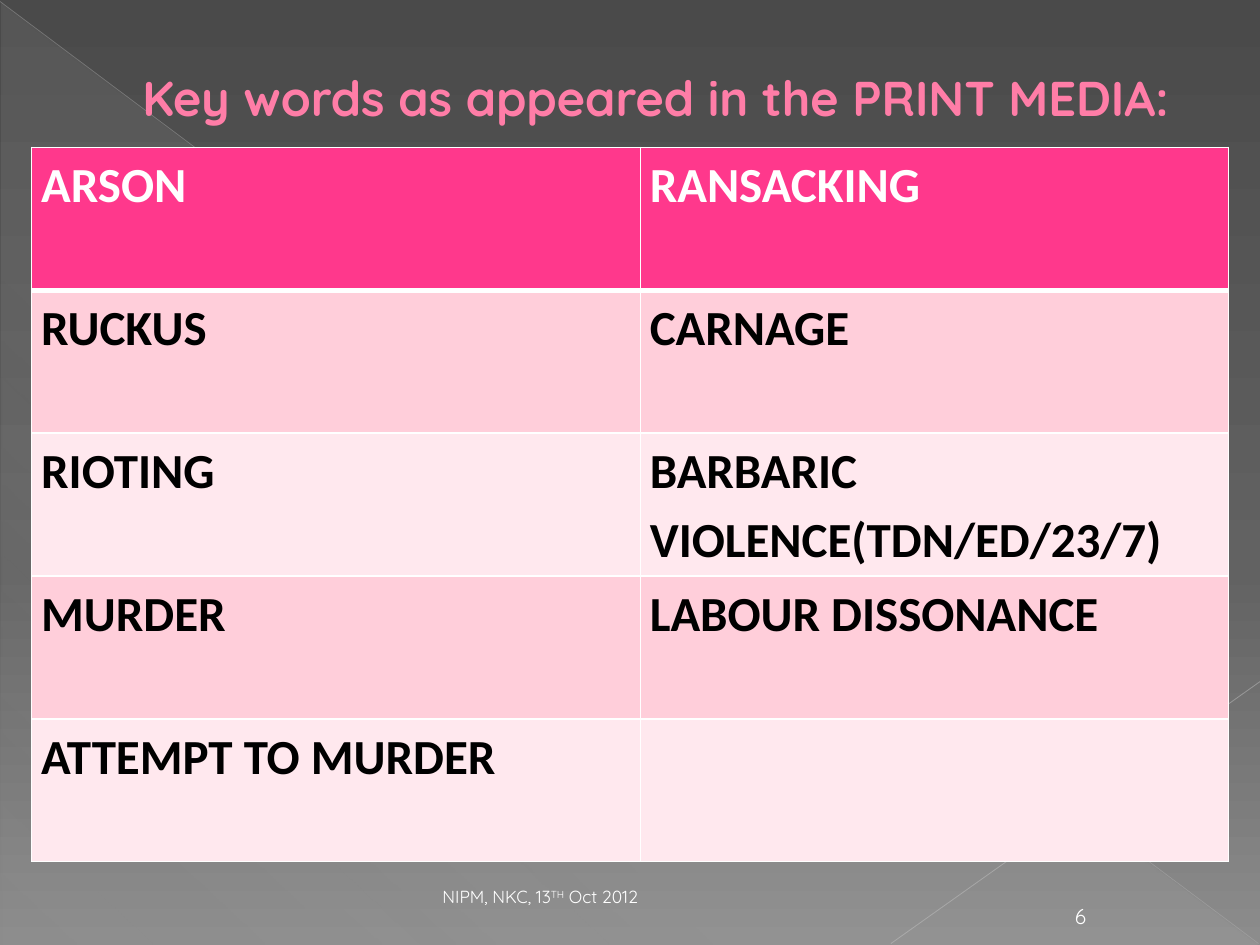
from dataclasses import dataclass

from lxml import etree
from pptx import Presentation
from pptx.dml.color import RGBColor
from pptx.enum.shapes import MSO_CONNECTOR, MSO_SHAPE
from pptx.enum.text import MSO_ANCHOR, MSO_AUTO_SIZE, PP_ALIGN
from pptx.oxml.ns import qn
from pptx.util import Cm, Pt

STRAIGHT = MSO_CONNECTOR.STRAIGHT
RIGHT_TRIANGLE = MSO_SHAPE.RIGHT_TRIANGLE
LEFT, CENTER, RIGHT = PP_ALIGN.LEFT, PP_ALIGN.CENTER, PP_ALIGN.RIGHT
MIDDLE, BOTTOM = MSO_ANCHOR.MIDDLE, MSO_ANCHOR.BOTTOM
TITLE_ONLY = 5
HEADING_FONT, TABLE_FONT = "Quicksand", "Calibri"
WHITE, BLACK = "FFFFFF", "000000"
HEADER_PINK, BAND_PINKS = "FF388C", ("FFE8EE", "FFCEDA")

KEY_WORDS = [
    ("ARSON", "RANSACKING"),
    ("RUCKUS", "CARNAGE"),
    ("RIOTING", "BARBARIC VIOLENCE(TDN/ED/23/7)"),
    ("MURDER", "LABOUR DISSONANCE"),
    ("ATTEMPT TO MURDER", ""),
]


@dataclass
class Stop:
    percent: int
    color: str
    opacity: int = 100


@dataclass
class Ray:
    start: tuple[float, float]
    end: tuple[float, float]
    color: str
    width: float
    opacity: int


@dataclass
class FooterPart:
    left: float
    width: float
    runs: list[tuple[str, int]]
    size: float
    align: PP_ALIGN
    bottom_inset: float


RAYS = [
    Ray((0, 0.03), (25.37, 19.02), "BFBFBF", 0.39, 35),
    Ray((25.4, 13.74), (17.96, 19.02), "C6C6C6", 0.47, 45),
]
FOOTER = [
    FooterPart(1.27, 11.84, [("NIPM, NKC, 13", 0), ("TH", 30), (" Oct 2012", 0)],
               10, RIGHT, 0.56),
    FooterPart(21.08, 1.4, [("6", 0)], 12, CENTER, 0.13),
]


def rgb(color: str) -> RGBColor:
    return RGBColor.from_string(color)


def add_color(parent, color: str, opacity: int = 100) -> None:
    clr = etree.SubElement(parent, qn("a:srgbClr"), val=color)
    if opacity < 100:
        etree.SubElement(clr, qn("a:alpha"), val=str(opacity * 1000))


def add_solid(parent, color: str, opacity: int = 100) -> None:
    add_color(etree.SubElement(parent, qn("a:solidFill")), color, opacity)


def set_gradient(fill, owner, stops: list[Stop], angle: int) -> None:
    """Fill owner, the XML parent of fill, along a clockwise angle."""
    fill.gradient()
    gradient = owner.find(qn("a:gradFill"))
    for child in list(gradient):
        gradient.remove(child)
    stop_list = etree.SubElement(gradient, qn("a:gsLst"))
    for stop in stops:
        node = etree.SubElement(stop_list, qn("a:gs"), pos=str(stop.percent * 1000))
        add_color(node, stop.color, stop.opacity)
    etree.SubElement(gradient, qn("a:lin"), ang=str(angle * 60000), scaled="0")


def add_run(paragraph, text: str, *, size: float, font: str = HEADING_FONT,
            color: str = WHITE, bold: bool = False, raised: int = 0):
    run = paragraph.add_run()
    run.text = text
    run.font.size, run.font.name, run.font.bold = Pt(size), font, bold
    run.font.color.rgb = rgb(color)
    if raised:
        run.font._element.set("baseline", str(raised * 1000))
    return run


def draw_backdrop(slide) -> None:
    fill = slide.background.fill
    set_gradient(fill, slide.element.find(".//" + qn("p:bgPr")),
                 [Stop(0, "4A4A4A"), Stop(60, "626262"), Stop(100, "8C8C8C")], 90)
    sheen = slide.shapes.add_shape(RIGHT_TRIANGLE, Cm(0.03), Cm(0.05), Cm(25.35), Cm(19))
    sheen.shadow.inherit = False
    sheen.line.fill.background()
    set_gradient(sheen.fill, sheen.element.spPr,
                 [Stop(0, "D2D2D2", 10), Stop(70, "D2D2D2", 8), Stop(100, "D2D2D2", 1)], 133)


def draw_ray(slide, ray: Ray) -> None:
    line = slide.shapes.add_connector(STRAIGHT, *map(Cm, ray.start + ray.end))
    line.line.width = Pt(ray.width)
    add_solid(line.line._get_or_add_ln(), ray.color, ray.opacity)
    etree.SubElement(line.element.spPr, qn("a:effectLst"))


def draw_title(slide, text: str) -> None:
    title = slide.shapes.title
    title.left, title.top, title.width, title.height = map(Cm, (1.27, 0.74, 22.86, 3.89))
    frame = title.text_frame
    frame.auto_size, frame.word_wrap = MSO_AUTO_SIZE.NONE, True
    frame.vertical_anchor = MIDDLE
    frame.margin_left, frame.margin_bottom = Cm(1.6), Cm(1.6)
    paragraph = frame.paragraphs[0]
    paragraph.alignment = LEFT
    run = add_run(paragraph, text, size=27.9, color="FF7DA7", bold=True)
    outline = etree.Element(qn("a:ln"), w=str(Pt(0.5)))
    add_solid(outline, "B12761")
    run.font._element.insert(0, outline)
    slide.shapes._spTree.append(title.element)


def set_borders(cell, top: float, bottom: float) -> None:
    properties = cell._tc.get_or_add_tcPr()
    for side, width in (("L", 1), ("R", 1), ("T", top), ("B", bottom)):
        border = etree.SubElement(properties, qn(f"a:ln{side}"), w=str(Pt(width)))
        add_solid(border, WHITE)


def draw_key_words(slide) -> None:
    table = slide.shapes.add_table(len(KEY_WORDS), 2, Cm(0.64), Cm(2.97),
                                   Cm(24.13), Cm(14.4)).table
    table.columns[0].width, table.columns[1].width = Cm(12.27), Cm(11.86)
    for row, words in enumerate(KEY_WORDS):
        table.rows[row].height = Cm(2.88)
        for column, word in enumerate(words):
            cell = table.cell(row, column)
            set_borders(cell, top=3 if row == 1 else 1, bottom=3 if row == 0 else 1)
            cell.fill.solid()
            cell.fill.fore_color.rgb = rgb(BAND_PINKS[row % 2] if row else HEADER_PINK)
            cell.margin_left = cell.margin_right = Cm(0.19)
            cell.margin_top = cell.margin_bottom = 0
            if word:
                paragraph = cell.text_frame.paragraphs[0]
                paragraph.line_spacing = 1.15
                add_run(paragraph, word, size=28, font=TABLE_FONT, bold=True,
                        color=BLACK if row else WHITE)


def draw_footer_part(slide, part: FooterPart) -> None:
    frame = slide.shapes.add_textbox(Cm(part.left), Cm(18.01), Cm(part.width),
                                     Cm(0.84)).text_frame
    frame.word_wrap = True
    frame.vertical_anchor = BOTTOM
    frame.margin_bottom = Cm(part.bottom_inset)
    paragraph = frame.paragraphs[0]
    paragraph.alignment = part.align
    for text, raised in part.runs:
        add_run(paragraph, text, size=part.size, raised=raised)


def main() -> None:
    deck = Presentation()
    deck.slide_width, deck.slide_height = Cm(25.4), Cm(19.05)
    slide = deck.slides.add_slide(deck.slide_layouts[TITLE_ONLY])
    draw_backdrop(slide)
    for ray in RAYS:
        draw_ray(slide, ray)
    draw_title(slide, "Key words as appeared in the PRINT MEDIA:")
    draw_key_words(slide)
    for part in FOOTER:
        draw_footer_part(slide, part)
    deck.save("out.pptx")


if __name__ == "__main__":
    main()
